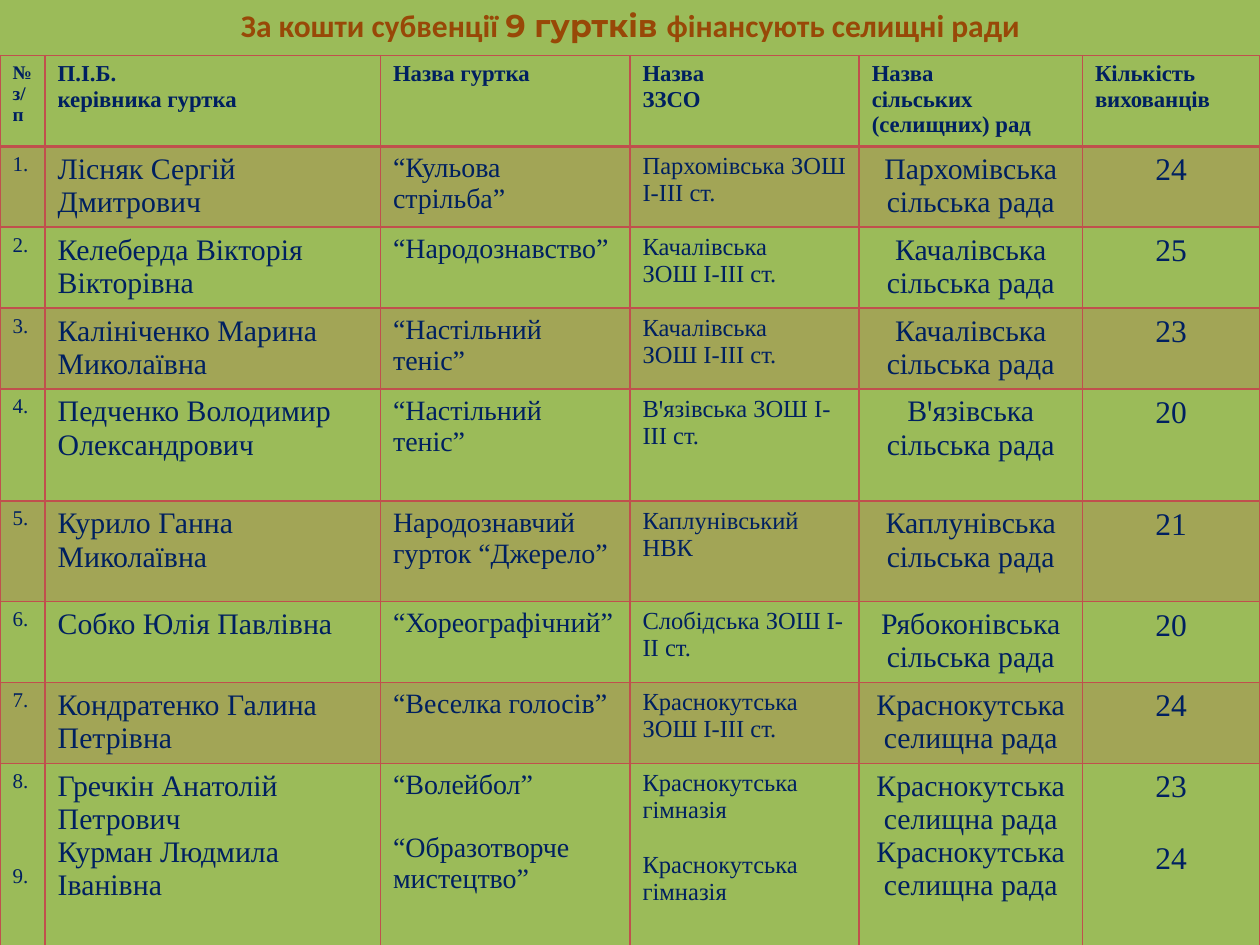
from lxml.etree import SubElement
from pptx import Presentation
from pptx.dml.color import RGBColor
from pptx.enum.text import MSO_ANCHOR, MSO_AUTO_SIZE, PP_ALIGN
from pptx.oxml import parse_xml
from pptx.oxml.ns import nsdecls, qn
from pptx.util import Cm, Pt

# Content
TITLE = [("За кошти субвенції ", "Calibri"), ("9 гуртків ", "Montserrat"),
         ("фінансують селищні ради", "Calibri")]
HEAD = ("№\nз/п", "П.І.Б.\nкерівника гуртка", "Назва гуртка", "Назва\nЗЗСО",
        "Назва\nсільських (селищних) рад", "Кількість вихованців")
CLUBS = [
    ("1.", "Лісняк Сергій Дмитрович", "“Кульова стрільба”",
     "Пархомівська ЗОШ І-ІІІ ст.", "Пархомівська\nсільська рада", "24"),
    ("2.", "Келеберда Вікторія Вікторівна", "“Народознавство”",
     "Качалівська\nЗОШ І-ІІІ ст.", "Качалівська\nсільська рада", "25"),
    ("3.", "Калініченко Марина Миколаївна", "“Настільний теніс”",
     "Качалівська\nЗОШ І-ІІІ ст.", "Качалівська\nсільська рада", "23"),
    ("4.", "Педченко Володимир Олександрович", "“Настільний теніс”",
     "Вꞌязівська ЗОШ І-ІІІ ст.", "Вꞌязівська\nсільська рада", "20"),
    ("5.", "Курило Ганна Миколаївна", "Народознавчий гурток “Джерело”",
     "Каплунівський НВК", "Каплунівська\nсільська рада", "21"),
    ("6.", "Собко Юлія Павлівна", "“Хореографічний”",
     "Слобідська ЗОШ І-ІІ ст.", "Рябоконівська\nсільська рада", "20"),
    ("7.", "Кондратенко Галина Петрівна", "“Веселка голосів”",
     "Краснокутська ЗОШ І-ІІІ ст.", "Краснокутська\nселищна рада", "24"),
    ("8.\n9.", "Гречкін Анатолій Петрович\nКурман Людмила Іванівна",
     "“Волейбол”\n“Образотворче мистецтво”",
     "Краснокутська гімназія\nКраснокутська гімназія",
     "Краснокутська\nселищна рада\nКраснокутська\nселищна рада", "23\n24"),
]

# Look, by column: width in cm, head size, body size, gap before a second club
COLS = [(0.91, 11, 12, 41), (6.76, 13, 17, 0), (5.03, 13, 16, 18),
        (4.62, 13, 14, 16), (4.5, 13, 17, 0), (3.58, 13, 18, 21)]
ROWS = [1.83, 1.63, 1.63, 1.63, 2.26, 2.03, 1.63, 1.63, 3.68]
GREEN, RED, NAVY, BROWN = "9BBB59", "C0504D", "002060", "984807"
CENTER_FROM = 4


def color(code):
    return RGBColor.from_string(code)


def style(para, size, bold, code, align):
    para.alignment = align
    font = para.font
    font.size, font.bold = Pt(size), bold
    font.color.rgb = color(code)


def tint(cell, code, alpha):
    cell.fill.solid()
    cell.fill.fore_color.rgb = color(code)
    node = cell._tc.tcPr.find(".//" + qn("a:srgbClr"))
    SubElement(node, qn("a:alpha"), val=str(alpha * 1000))


def border(cell, sides):
    for i, (side, width) in enumerate(sides.items()):
        line = parse_xml(
            f'<a:ln{side} {nsdecls("a")} w="{Pt(width)}"><a:solidFill>'
            f'<a:srgbClr val="{RED}"/></a:solidFill></a:ln{side}>')
        cell._tc.tcPr.insert(i, line)


deck = Presentation()
deck.slide_width, deck.slide_height = Cm(25.4), Cm(19.05)
slide = deck.slides.add_slide(deck.slide_layouts[5])
slide.background.fill.solid()
slide.background.fill.fore_color.rgb = color(GREEN)

# Title
title = slide.shapes.title
title.left, title.top, title.width, title.height = Cm(0.71), Cm(0), Cm(24), Cm(1.02)
frame = title.text_frame
frame.auto_size = MSO_AUTO_SIZE.NONE
frame.vertical_anchor = MSO_ANCHOR.TOP
para = frame.paragraphs[0]
style(para, 18, True, BROWN, PP_ALIGN.CENTER)
for text, face in TITLE:
    run = para.add_run()
    run.text, run.font.name = text, face

# Table grid
table = slide.shapes.add_table(len(ROWS), len(COLS), Cm(0), Cm(1.12),
                               Cm(25.4), Cm(sum(ROWS))).table
table.first_row = table.horz_banding = False
for row, high in zip(table.rows, ROWS):
    row.height = Cm(high)
for col, (wide, *_) in zip(table.columns, COLS):
    col.width = Cm(wide)

# Cells
for r, texts in enumerate([HEAD] + CLUBS):
    head, last = r == 0, r == len(CLUBS)
    for c, (text, (_, big, size, gap)) in enumerate(zip(texts, COLS)):
        cell = table.cell(r, c)
        cell.text = text
        mid = not head and c >= CENTER_FROM
        for para in cell.text_frame.paragraphs:
            style(para, big if head else size, head, NAVY,
                  PP_ALIGN.CENTER if mid else PP_ALIGN.LEFT)
            para.font.name = "Times New Roman"
        if last and gap:
            para.space_before = Pt(gap)
        if r % 2:
            tint(cell, RED, 20)
        else:
            cell.fill.background()
        border(cell, {"L": 1, "R": 1, "T": 2 if r == 1 else 1, "B": 2 if head else 1})

deck.save("out.pptx")
